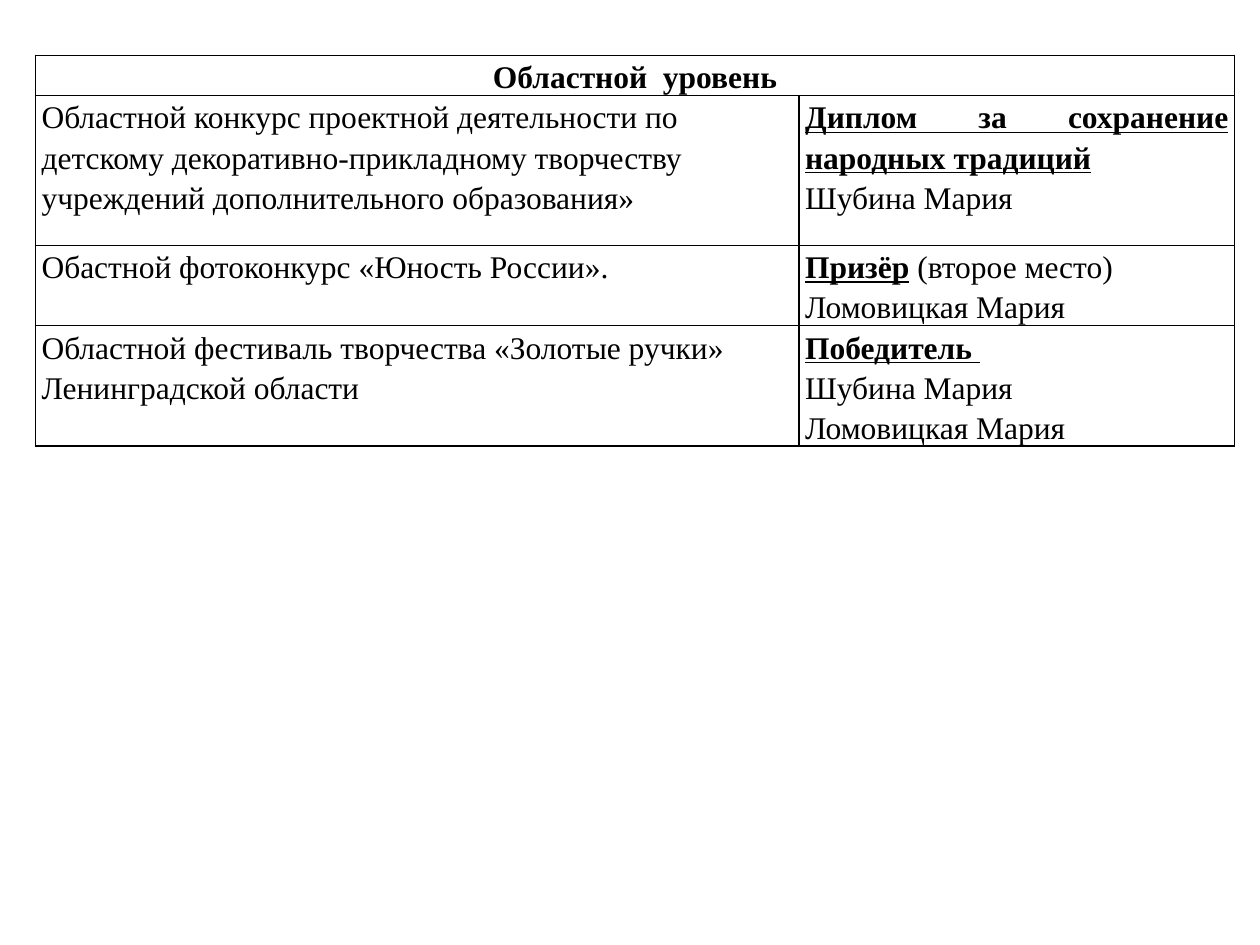
"""Build a slide with a table of regional contest awards."""
import dataclasses

import lxml.etree
import pptx
import pptx.dml.color
import pptx.enum.text
import pptx.oxml.ns
import pptx.table
import pptx.text.text
import pptx.util

Inches = pptx.util.Inches
ALIGN = pptx.enum.text.PP_ALIGN
COLORS = {"ink": "000000"}
COLUMN_WIDTHS = (6.06, 3.46)
ROW_HEIGHTS = (0.25, 1.19, 0.5, 0.75)
PLAIN = {"bold": False, "underline": False}
HEADING = {"bold": True, "underline": False}
AWARD = {"bold": True, "underline": True}
CELL_FORMAT = {
    "margin_left": Inches(0.05),
    "margin_right": Inches(0.05),
    "margin_top": 0,
    "margin_bottom": 0,
    "vertical_anchor": pptx.enum.text.MSO_ANCHOR.TOP,
}


@dataclasses.dataclass(frozen=True)
class Contest:
    name: str
    award: str
    note: str
    winners: tuple[str, ...]


CONTESTS = (
    Contest(
        "Областной конкурс проектной деятельности по детскому "
        "декоративно-прикладному творчеству учреждений дополнительного образования»",
        "Диплом за сохранение народных традиций", "", ("Шубина Мария ",),
    ),
    Contest(
        "Обастной фотоконкурс «Юность России».",
        "Призёр", " (второе место)", ("Ломовицкая Мария",),
    ),
    Contest(
        "Областной фестиваль творчества «Золотые ручки»\vЛенинградской области",
        "Победитель ", "", ("Шубина Мария", "Ломовицкая Мария"),
    ),
)


def set_attributes(target: object, values: dict) -> None:
    """Apply a dict of format values to an object."""
    for name, value in values.items():
        setattr(target, name, value)


def add_run(p: pptx.text.text._Paragraph, text: str, style: dict) -> None:
    """Append a formatted run to a paragraph."""
    r = p.add_run()
    r.text = text
    set_attributes(r.font, {"name": "Times New Roman", "size": pptx.util.Pt(18), **style})
    r.font.color.rgb = pptx.dml.color.RGBColor.from_string(COLORS["ink"])


def fill_cell(cell: pptx.table._Cell, lines: list, align: ALIGN) -> None:
    """Write lines of (text, style) runs into a cell."""
    tf = cell.text_frame
    for i, runs in enumerate(lines):
        p = tf.add_paragraph() if i else tf.paragraphs[0]
        set_attributes(p, {"alignment": align, "line_spacing": 1.15})
        for text, style in runs:
            for j, part in enumerate(text.split("\v")):
                if j:
                    p.add_line_break()
                add_run(p, part, style)


def format_cell(cell: pptx.table._Cell) -> None:
    """Set margins, clear the fill and draw a border on every side."""
    set_attributes(cell, CELL_FORMAT)
    cell.fill.background()
    qn = pptx.oxml.ns.qn
    for i, side in enumerate("LRTB"):
        ln = lxml.etree.Element(qn(f"a:ln{side}"), w=str(pptx.util.Pt(1)))
        fill = lxml.etree.SubElement(ln, qn("a:solidFill"))
        lxml.etree.SubElement(fill, qn("a:srgbClr"), val=COLORS["ink"])
        cell._tc.get_or_add_tcPr().insert(i, ln)


def main() -> None:
    """Create and save the presentation."""
    prs = pptx.Presentation()
    set_attributes(prs, {"slide_width": Inches(10), "slide_height": Inches(7.5)})
    s = prs.slides.add_slide(prs.slide_layouts[6])
    table = s.shapes.add_table(
        len(ROW_HEIGHTS), len(COLUMN_WIDTHS), Inches(0.28), Inches(0.44),
        Inches(sum(COLUMN_WIDTHS)), Inches(sum(ROW_HEIGHTS)),
    ).table
    set_attributes(table, {"first_row": False, "horz_banding": False})
    for column, width in zip(table.columns, COLUMN_WIDTHS):
        column.width = Inches(width)
    for row, height in zip(table.rows, ROW_HEIGHTS):
        row.height = Inches(height)
    for cell in table.iter_cells():
        format_cell(cell)
    table.cell(0, 0).merge(table.cell(0, 1))
    fill_cell(table.cell(0, 0), [[("Областной  уровень", HEADING)]], ALIGN.CENTER)
    for i, contest in enumerate(CONTESTS, start=1):
        fill_cell(table.cell(i, 0), [[(contest.name, PLAIN)]], ALIGN.LEFT)
        award = [(contest.award, AWARD)]
        if contest.note:
            award.append((contest.note, PLAIN))
        winners = [[(winner, PLAIN)] for winner in contest.winners]
        fill_cell(table.cell(i, 1), [award, *winners], ALIGN.JUSTIFY)
    prs.save("out.pptx")


if __name__ == "__main__":
    main()
